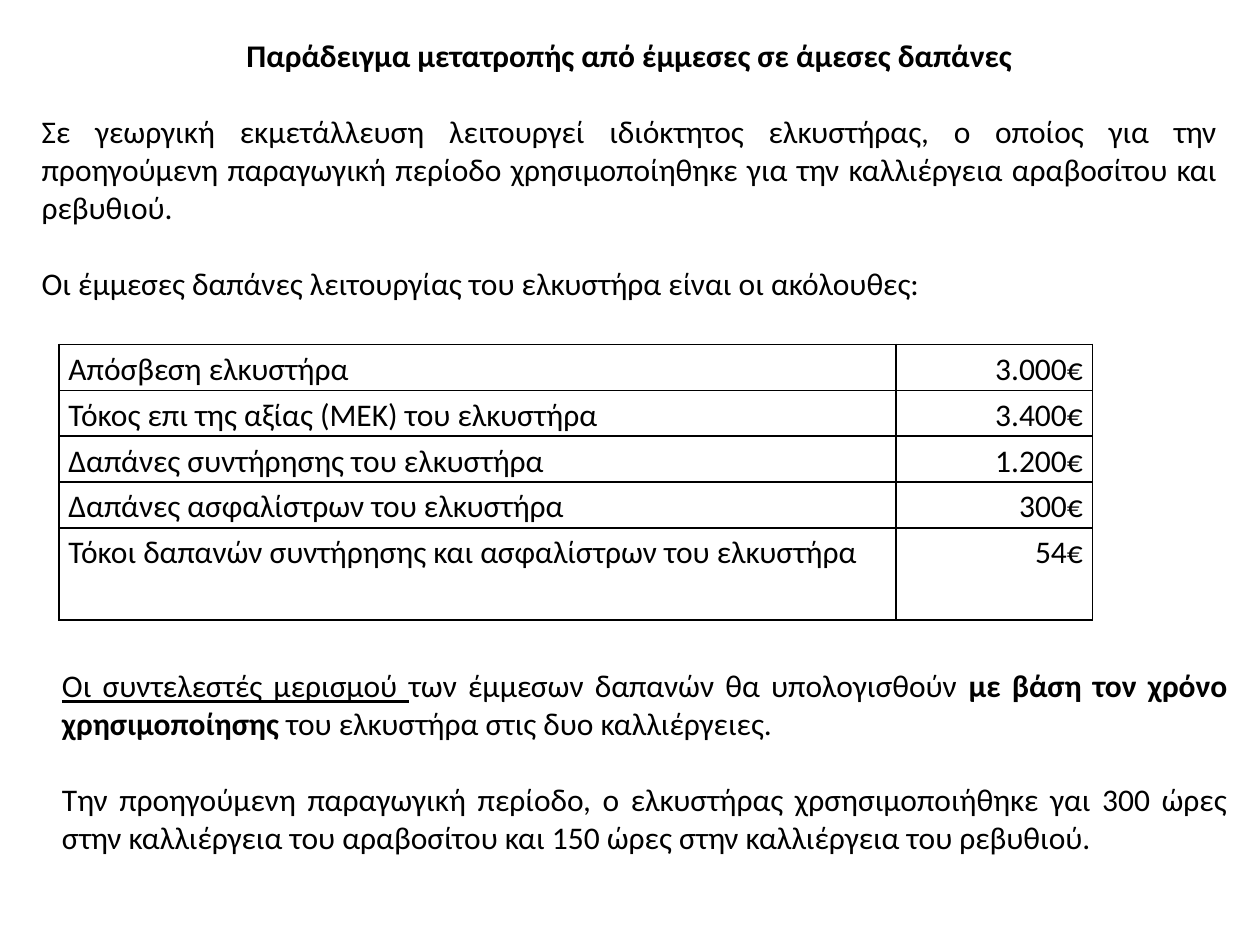
from lxml.etree import SubElement
from pptx import Presentation
from pptx.dml.color import RGBColor
from pptx.enum.text import MSO_ANCHOR, MSO_AUTO_SIZE, PP_ALIGN
from pptx.oxml.ns import qn
from pptx.util import Cm, Pt

# Content: paragraphs are (alignment, runs), runs are (text, style)
FONT, SIZE, GAP, INK = "Calibri", 18, 22, "000000"
MID, FULL = PP_ALIGN.CENTER, PP_ALIGN.JUSTIFY

INTRO = [
    (MID, [("Παράδειγμα μετατροπής από έμμεσες σε άμεσες δαπάνες", "b")]),
    (FULL, [("Σε γεωργική εκμετάλλευση λειτουργεί ιδιόκτητος ελκυστήρας, "
             "ο οποίος για την προηγούμενη παραγωγική περίοδο "
             "χρησιμοποίηθηκε για την καλλιέργεια αραβοσίτου και "
             "ρεβυθιού. ", "")]),
    (FULL, [("Οι έμμεσες δαπάνες λειτουργίας του ελκυστήρα είναι οι "
             "ακόλουθες: ", "")]),
]
COSTS = [
    ("Απόσβεση ελκυστήρα", "3.000€"),
    ("Τόκος επι της αξίας (ΜΕΚ) του ελκυστήρα", "3.400€"),
    ("Δαπάνες συντήρησης του ελκυστήρα", "1.200€"),
    ("Δαπάνες ασφαλίστρων του ελκυστήρα", "300€"),
    ("Τόκοι δαπανών συντήρησης και ασφαλίστρων του ελκυστήρα", "54€"),
]
NOTES = [
    (FULL, [("Οι συντελεστές μερισμού ", "u"),
            ("των έμμεσων δαπανών θα υπολογισθούν ", ""),
            ("με βάση τον χρόνο χρησιμοποίησης ", "b"),
            ("του ελκυστήρα στις δυο καλλιέργειες. ", "")]),
    (FULL, [("Την προηγούμενη παραγωγική περίοδο, ο ελκυστήρας "
             "χρσησιμοποιήθηκε γαι 300 ώρες στην καλλιέργεια του "
             "αραβοσίτου και 150 ώρες στην καλλιέργεια του ρεβυθιού.", "")]),
]
COLS = (16.87, 3.96)
ROW = 0.927


def color(code):
    return RGBColor.from_string(code)


def add_run(para, text, style=""):
    run = para.add_run()
    run.text = text
    font = run.font
    font.name, font.size = FONT, Pt(SIZE)
    font.color.rgb = color(INK)
    font.bold = "b" in style
    font.underline = "u" in style


def add_text(slide, box, paras):
    frame = slide.shapes.add_textbox(*map(Cm, box)).text_frame
    frame.word_wrap = True
    frame.auto_size = MSO_AUTO_SIZE.SHAPE_TO_FIT_TEXT
    frame.vertical_anchor = MSO_ANCHOR.MIDDLE
    for i, (align, runs) in enumerate(paras):
        para = frame.add_paragraph() if i else frame.paragraphs[0]
        para.alignment = align
        para.space_before = Pt(GAP if i else 0)
        for text, style in runs:
            add_run(para, text, style)


def add_edges(cell):
    props = cell._tc.get_or_add_tcPr()
    for side in ("lnL", "lnR", "lnT", "lnB"):
        line = SubElement(props, qn("a:" + side), w=str(Pt(1)))
        fill = SubElement(line, qn("a:solidFill"))
        SubElement(fill, qn("a:srgbClr"), val=INK)


def add_costs(slide, left, top):
    count = len(COSTS)
    highs = [ROW] * (count - 1) + [2 * ROW]
    table = slide.shapes.add_table(
        count, len(COLS), Cm(left), Cm(top),
        Cm(sum(COLS)), Cm(sum(highs))).table
    table.first_row = table.horz_banding = False
    for col, wide in zip(table.columns, COLS):
        col.width = Cm(wide)
    for row, high, texts in zip(table.rows, highs, COSTS):
        row.height = Cm(high)
        for i, (cell, text) in enumerate(zip(row.cells, texts)):
            cell.margin_left = cell.margin_right = Cm(0.19)
            cell.margin_top = cell.margin_bottom = 0
            add_edges(cell)
            cell.fill.background()
            para = cell.text_frame.paragraphs[0]
            para.alignment = PP_ALIGN.RIGHT if i else PP_ALIGN.LEFT
            para.line_spacing = 1.15
            add_run(para, text)


def main():
    deck = Presentation()
    deck.slide_width, deck.slide_height = Cm(25.4), Cm(19.05)
    slide = deck.slides.add_slide(deck.slide_layouts[6])
    # Title and introduction, cost table, closing notes
    add_text(slide, (0.59, 0.59, 24.2, 5.64), INTRO)
    add_costs(slide, 1.19, 6.94)
    add_text(slide, (1, 13.29, 24, 4.11), NOTES)
    deck.save("out.pptx")


if __name__ == "__main__":
    main()
